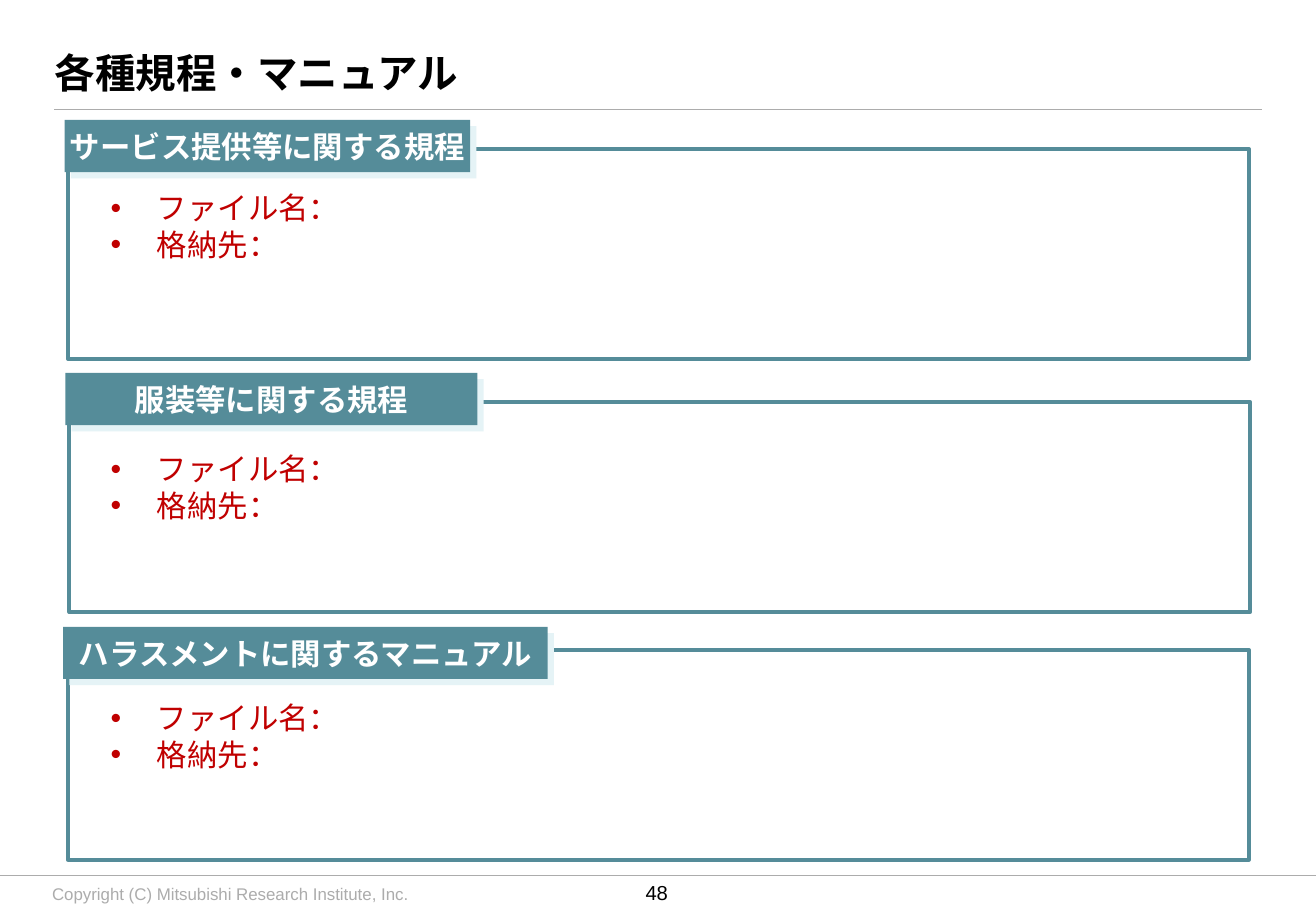
from lxml.etree import SubElement
from pptx import Presentation
from pptx.dml.color import RGBColor
from pptx.enum.shapes import MSO_CONNECTOR, MSO_SHAPE
from pptx.enum.text import MSO_ANCHOR, MSO_AUTO_SIZE, PP_ALIGN
from pptx.oxml.ns import qn
from pptx.util import Cm, Pt

TEAL = RGBColor(0x55, 0x8C, 0x99)
PALE_TEAL = RGBColor(0xE5, 0xF3, 0xF6)
GRAY = RGBColor(0xAC, 0xAC, 0xAC)
RED = RGBColor(0xC0, 0x00, 0x00)
WHITE = RGBColor(0xFF, 0xFF, 0xFF)
BLACK = RGBColor(0x00, 0x00, 0x00)
JAPANESE_FONT = "Noto Sans CJK JP"
SHADOW_OFFSET = 0.13


def write(paragraph, text, size, color, bold=False, align=PP_ALIGN.LEFT, name=JAPANESE_FONT):
    paragraph.alignment = align
    paragraph.space_before = Pt(0)
    run = paragraph.add_run()
    run.text = text
    font_values = {"size": Pt(size), "bold": bold, "name": name}
    for attribute, value in font_values.items():
        setattr(run.font, attribute, value)
    run.font.color.rgb = color
    SubElement(run.font._element, qn("a:ea")).set("typeface", name)


def format_frame(text_frame, margins=(0, 0, 0, 0), anchor=MSO_ANCHOR.MIDDLE,
                 auto_size=MSO_AUTO_SIZE.NONE):
    left, top, right, bottom = margins
    frame_values = {
        "margin_left": Cm(left), "margin_top": Cm(top),
        "margin_right": Cm(right), "margin_bottom": Cm(bottom),
        "vertical_anchor": anchor, "word_wrap": True, "auto_size": auto_size,
    }
    for attribute, value in frame_values.items():
        setattr(text_frame, attribute, value)


presentation = Presentation()
presentation.slide_width = Cm(27.51)
presentation.slide_height = Cm(19.05)
slide = presentation.slides.add_slide(presentation.slide_layouts[4])
title, *bodies = slide.placeholders
unused_body = bodies.pop()
unused_body._element.getparent().remove(unused_body._element)

# Title
title.left, title.top, title.width, title.height = Cm(1.14), Cm(0.74), Cm(25.25), Cm(1.55)
format_frame(title.text_frame, (0, 0.13, 0.25, 0.13))
write(title.text_frame.paragraphs[0], "各種規程・マニュアル", 24, BLACK, bold=True)

# Rules under the title and above the footer
for left, right, top, weight in [(1.14, 26.39, 2.29, 1), (0, 27.51, 18.31, 0.75)]:
    rule = slide.shapes.add_connector(
        MSO_CONNECTOR.STRAIGHT, Cm(left), Cm(top), Cm(right), Cm(top))
    rule.line.color.rgb = GRAY
    rule.line.width = Pt(weight)
    SubElement(rule._element.spPr, qn("a:effectLst"))

# Footer
footers = [
    ((1.09, 18.47, 12.7, 0.43), "Copyright (C) Mitsubishi Research Institute, Inc.",
     10, GRAY, PP_ALIGN.LEFT),
    ((13.08, 18.31, 1.3, 0.71), "48", 12, BLACK, PP_ALIGN.CENTER),
]
for box, text, size, color, align in footers:
    footer = slide.shapes.add_textbox(*map(Cm, box))
    format_frame(footer.text_frame)
    write(footer.text_frame.paragraphs[0], text, size, color, align=align, name="Arial")

# Sections: heading, heading left, top and width, frame left and top, list top
sections = [
    ("サービス提供等に関する規程", 1.35, 2.51, 8.48, 1.42, 3.12, 3.96),
    ("服装等に関する規程", 1.37, 7.8, 8.61, 1.45, 8.41, 9.42),
    ("ハラスメントに関するマニュアル", 1.32, 13.11, 10.13, 1.42, 13.59, 14.63),
]
for body, section in zip(bodies, sections):
    heading, left, top, width, frame_left, frame_top, list_top = section

    # Frame, heading shadow and heading
    group = slide.shapes.add_group_shape()
    rectangles = [
        ((frame_left, frame_top, 24.69, 4.39), WHITE),
        ((left + SHADOW_OFFSET, top + SHADOW_OFFSET, width, 1.09), PALE_TEAL),
        ((left, top, width, 1.09), TEAL),
    ]
    for box, fill in rectangles:
        shape = group.shapes.add_shape(MSO_SHAPE.RECTANGLE, *map(Cm, box))
        shape.shadow.inherit = False
        shape.fill.solid()
        shape.fill.fore_color.rgb = fill
        if fill == WHITE:
            shape.line.color.rgb = TEAL
            shape.line.width = Pt(2.25)
        else:
            shape.line.fill.background()
    format_frame(shape.text_frame)
    write(shape.text_frame.paragraphs[0], heading, 18, WHITE, True, PP_ALIGN.CENTER)

    # List, brought in front of its frame
    slide.shapes._spTree.append(body._element)
    body.left, body.top, body.width, body.height = Cm(2.26), Cm(list_top), Cm(13.64), Cm(1.73)
    format_frame(body.text_frame, anchor=MSO_ANCHOR.TOP,
                 auto_size=MSO_AUTO_SIZE.SHAPE_TO_FIT_TEXT)
    items = [body.text_frame.paragraphs[0], body.text_frame.add_paragraph()]
    for paragraph, text in zip(items, ["ファイル名：", "格納先："]):
        properties = paragraph._p.get_or_add_pPr()
        properties.set("marL", str(Cm(1.02)))
        properties.set("indent", str(Cm(-0.97)))
        SubElement(properties, qn("a:buFont")).set("typeface", "Arial")
        SubElement(properties, qn("a:buChar")).set("char", "•")
        write(paragraph, text, 18, RED)

presentation.save("out.pptx")
